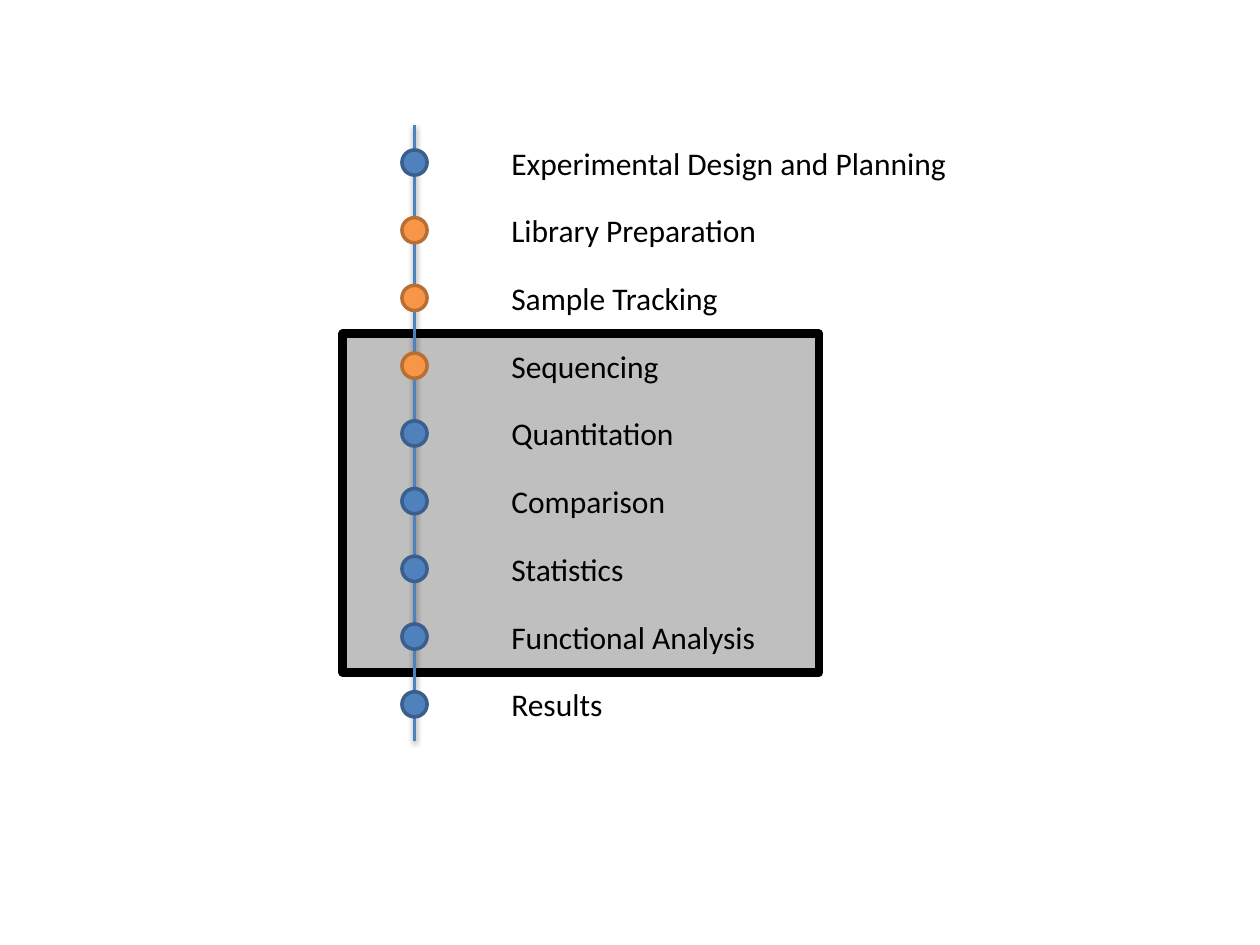
import dataclasses

import pptx
import pptx.dml.color
import pptx.enum.shapes
import pptx.enum.text
import pptx.oxml
import pptx.oxml.ns
import pptx.util

INK = {
    "black": "000000", "grey": "BFBFBF",
    "blue": "4F81BD", "navy": "3A5F8C",
    "orange": "F79646", "brown": "B76F34",
}
EDGE = {"blue": "navy", "orange": "brown"}
FONT = "Calibri"

# Grid in inches: one row per step, measured from the first dot's centre
TOP, LAST = 1.29, 5.59
AXIS, TEXT = 3.29, 3.96
DOT, HIGH = 0.2, 0.4


@dataclasses.dataclass
class Step:
    name: str
    wide: float
    tint: str = "blue"


STEPS = [
    Step("Experimental Design and Planning", 3.69),
    Step("Library Preparation", 2.17, "orange"),
    Step("Sample Tracking", 1.86, "orange"),
    Step("Sequencing", 1.39, "orange"),
    Step("Quantitation", 1.51),
    Step("Comparison", 1.44),
    Step("Statistics", 1.1),
    Step("Functional Analysis", 2.16),
    Step("Results", 0.93),
]
PITCH = (LAST - TOP) / (len(STEPS) - 1)


def row(num: float) -> float:
    """Centre of a step's row, counted from 0."""
    return TOP + num * PITCH


def color(name: str) -> pptx.dml.color.RGBColor:
    return pptx.dml.color.RGBColor.from_string(INK[name])


def inches(*nums: float) -> list[pptx.util.Length]:
    return [pptx.util.Inches(num) for num in nums]


def shape(shapes, kind, box: tuple, fill: str, edge: str, size: float) -> None:
    item = shapes.add_shape(kind, *inches(*box))
    item.shadow.inherit = False
    item.fill.solid()
    item.fill.fore_color.rgb = color(fill)
    item.line.color.rgb = color(edge)
    item.line.width = pptx.util.Pt(size)


def axis(shapes, top: float, end: float) -> None:
    """Draw the vertical line with its soft shadow."""
    line = shapes.add_connector(
        pptx.enum.shapes.MSO_CONNECTOR.STRAIGHT, *inches(AXIS, top, AXIS, end))
    line.line.color.rgb = color("blue")
    line.line.width = pptx.util.Pt(2)
    blur, dist = pptx.util.Pt(3.1), pptx.util.Pt(1.6)
    line._element.spPr.append(pptx.oxml.parse_xml(
        f'<a:effectLst {pptx.oxml.ns.nsdecls("a")}>'
        f'<a:outerShdw blurRad="{blur}" dist="{dist}" dir="5400000" rotWithShape="0">'
        f'<a:srgbClr val="{INK["black"]}"><a:alpha val="38000"/></a:srgbClr>'
        '</a:outerShdw></a:effectLst>'))


def label(shapes, step: Step, mid: float) -> None:
    box = shapes.add_textbox(*inches(TEXT, mid - HIGH / 2, step.wide, HIGH))
    frame = box.text_frame
    frame.word_wrap = False
    frame.auto_size = pptx.enum.text.MSO_AUTO_SIZE.SHAPE_TO_FIT_TEXT
    run = frame.paragraphs[0].add_run()
    run.text = step.name
    run.font.name = FONT
    run.font.size = pptx.util.Pt(18)
    run.font.color.rgb = color("black")


def main() -> None:
    deck = pptx.Presentation()
    deck.slide_width, deck.slide_height = inches(10, 7.5)
    slide = deck.slides.add_slide(deck.slide_layouts[6])
    kinds = pptx.enum.shapes.MSO_SHAPE

    # The frame holds Sequencing to Functional Analysis
    shape(slide.shapes, kinds.RECTANGLE, (2.72, row(2.53), 3.78, 5 * PITCH),
          "grey", "black", 5)

    group = slide.shapes.add_group_shape().shapes
    axis(group, 0.99, 5.88)
    for num, step in enumerate(STEPS):
        label(group, step, row(num))
    for num, step in enumerate(STEPS):
        box = (AXIS - DOT / 2, row(num) - DOT / 2, DOT, DOT)
        shape(group, kinds.OVAL, box, step.tint, EDGE[step.tint], 2)

    deck.save("out.pptx")


if __name__ == "__main__":
    main()
